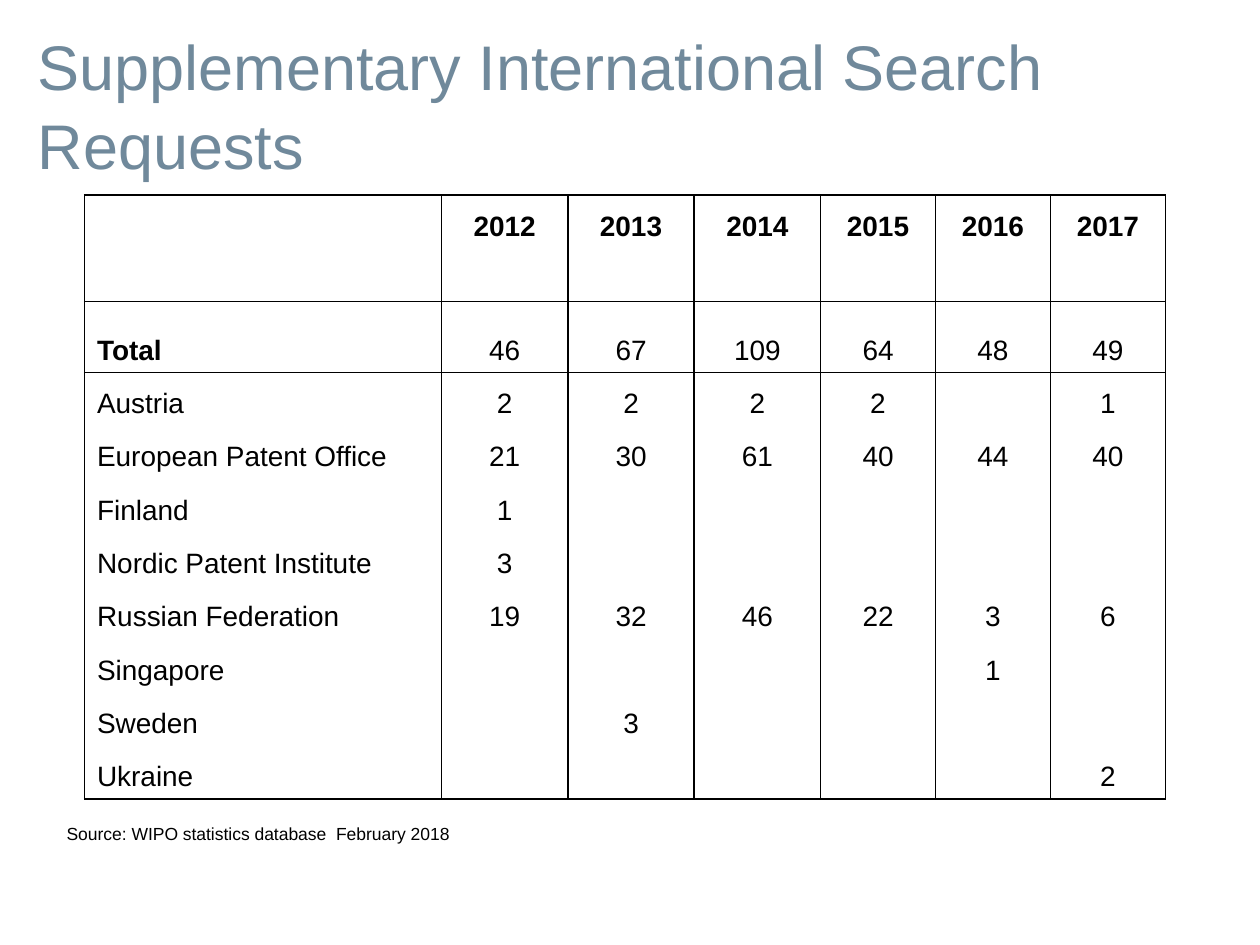
from lxml import etree
from pptx import Presentation
from pptx.dml.color import RGBColor
from pptx.enum.text import MSO_ANCHOR, PP_ALIGN
from pptx.oxml.ns import qn
from pptx.util import Pt

LEFT, CENTER = PP_ALIGN.LEFT, PP_ALIGN.CENTER
TOP, MIDDLE, BOTTOM = MSO_ANCHOR.TOP, MSO_ANCHOR.MIDDLE, MSO_ANCHOR.BOTTOM

COLORS = {"title": "70899B", "text": "000000", "border": "000000"}

REQUESTS = [
    ["", "2012", "2013", "2014", "2015", "2016", "2017"],
    [""] * 7,
    ["Total", "46", "67", "109", "64", "48", "49"],
    ["Austria", "2", "2", "2", "2", "", "1"],
    ["European Patent Office", "21", "30", "61", "40", "44", "40"],
    ["Finland", "1", "", "", "", "", ""],
    ["Nordic Patent Institute", "3", "", "", "", "", ""],
    ["Russian Federation", "19", "32", "46", "22", "3", "6"],
    ["Singapore", "", "", "", "", "1", ""],
    ["Sweden", "", "3", "", "", "", ""],
    ["Ukraine", "", "", "", "", "", "2"],
]
HEADER_ROW, HEADER_END, TOTAL_ROW, LAST_ROW = 0, 1, 2, len(REQUESTS) - 1
RULED_ROWS = {HEADER_END, TOTAL_ROW, LAST_ROW}
COL_WIDTHS = [204] + [72.2] * 3 + [65.7] * 3
ROW_HEIGHTS = [40.5 if r == TOTAL_ROW else 30.5 for r in range(len(REQUESTS))]


class SlideBuilder:
    """Holds the text style and the slide being filled."""

    font = "Arial"

    def __init__(self, slide):
        self.slide = slide

    def set_text(self, tf, text, size, color, align=LEFT, bold=False):
        tf.text = text
        p = tf.paragraphs[0]
        p.alignment = align
        for r in p.runs:
            r.font.name = self.font
            r.font.size = Pt(size)
            r.font.bold = bold
            r.font.color.rgb = RGBColor.from_string(COLORS[color])
        return p

    def text(self, box, text, size, color, anchor=TOP, spacing=1.0):
        tf = self.slide.shapes.add_textbox(*map(Pt, box)).text_frame
        tf.word_wrap = True
        tf.vertical_anchor = anchor
        self.set_text(tf, text, size, color).line_spacing = spacing

    def borders(self, cell, top, bottom):
        """Rule both sides of a cell, and its top and bottom where asked."""
        tc_pr = cell._tc.get_or_add_tcPr()
        sides = {"a:lnL": True, "a:lnR": True, "a:lnT": top, "a:lnB": bottom}
        for tag, shown in sides.items():
            ln = etree.SubElement(tc_pr, qn(tag), w=str(Pt(1)))
            if shown:
                fill = etree.SubElement(ln, qn("a:solidFill"))
                etree.SubElement(fill, qn("a:srgbClr"), val=COLORS["border"])
            else:
                etree.SubElement(ln, qn("a:noFill"))

    def table(self, left, top, rows):
        box = (left, top, sum(COL_WIDTHS), sum(ROW_HEIGHTS))
        table = self.slide.shapes.add_table(
            len(rows), len(COL_WIDTHS), *map(Pt, box)).table
        table.first_row = table.horz_banding = False
        for column, width in zip(table.columns, COL_WIDTHS):
            column.width = Pt(width)
        for row, height in zip(table.rows, ROW_HEIGHTS):
            row.height = Pt(height)
        for r, values in enumerate(rows):
            for c, value in enumerate(values):
                cell = table.cell(r, c)
                self.set_text(cell.text_frame, value, 16, "text",
                              CENTER if c else LEFT,
                              r == HEADER_ROW or value == "Total")
                cell.vertical_anchor = BOTTOM
                merged = c == 0 and r == HEADER_ROW
                self.borders(cell, r == HEADER_ROW or r - 1 in RULED_ROWS,
                             merged or r in RULED_ROWS)
                cell.fill.background()
        table.cell(HEADER_ROW, 0).merge(table.cell(HEADER_END, 0))


def main():
    prs = Presentation()
    prs.slide_width, prs.slide_height = Pt(720), Pt(540)
    s = SlideBuilder(prs.slides.add_slide(prs.slide_layouts[6]))
    s.text((14.4, 9.4, 714.2, 99.4),
           "Supplementary International Search Requests",
           36, "title", MIDDLE, 1.04)
    s.table(48.3, 111.4, REQUESTS)
    s.text((31, 466.6, 581, 19.4),
           "Source: WIPO statistics database  February 2018", 10, "text")
    prs.save("out.pptx")


if __name__ == "__main__":
    main()
